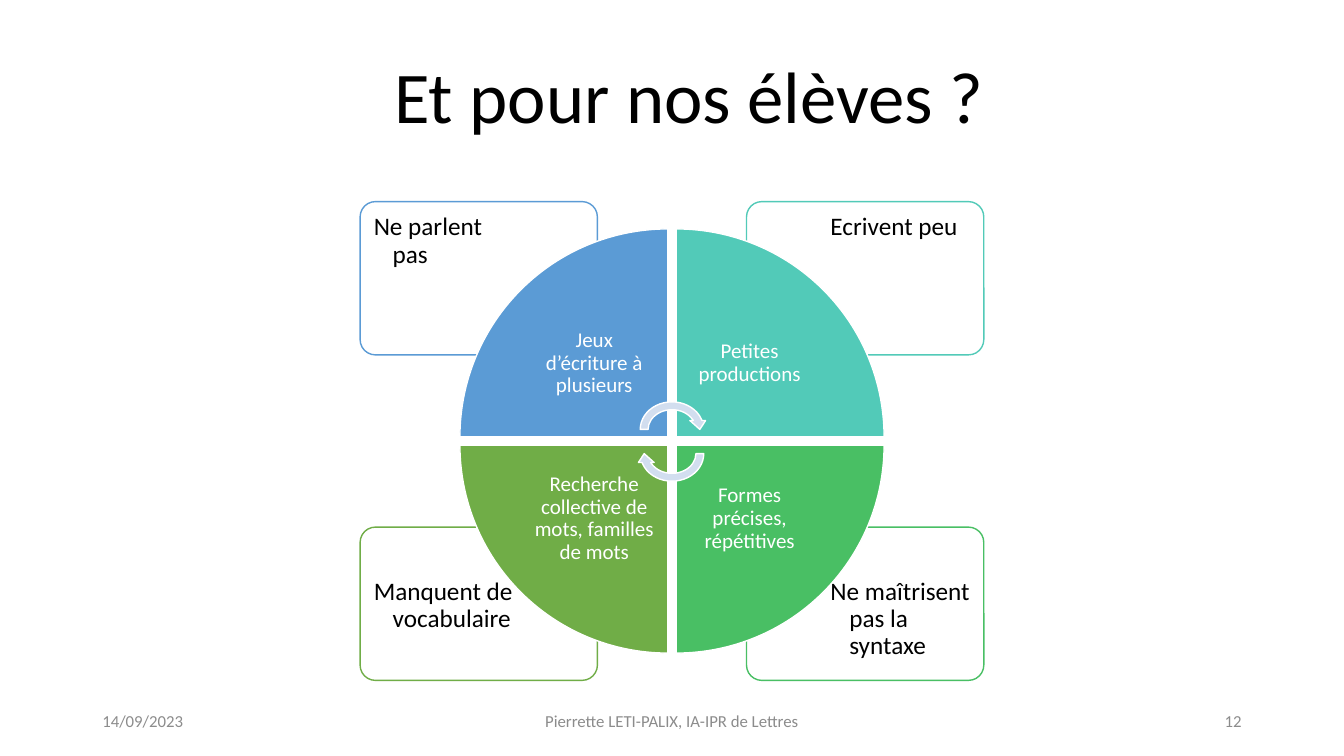
"""Builds the slide on pupils' difficulties and the matching activities."""
from pptx import Presentation
from pptx.dml.color import RGBColor
from pptx.enum.shapes import MSO_SHAPE as SHAPE
from pptx.enum.text import MSO_ANCHOR as ANCHOR, PP_ALIGN as ALIGN
from pptx.util import Emu, Pt

PX = 9525
FONT = "Calibri"
COLORS = {
    "blue": "5B9BD5", "teal": "52CAB8", "olive": "70AD47", "green": "49BF64",
    "pale": "D2DEEF", "white": "FFFFFF", "black": "000000", "grey": "8C8C8C",
}
CARD_W, CARD_H = 226, 146
NOTE_W, NOTE_H = 156, 104
WEDGE, LABEL = 198, 140
HANG = 18
QUADRANTS = [
    (0, 0, 0, "blue", "Ne parlent pas", "Jeux d’écriture à plusieurs"),
    (1, 0, 90, "teal", "Ecrivent peu", "Petites productions"),
    (1, 1, 180, "green", "Ne maîtrisent pas la syntaxe", "Formes précises, répétitives"),
    (0, 1, 270, "olive", "Manquent de vocabulaire",
     "Recherche collective de mots, familles de mots"),
]
FOOTERS = [
    (88, 288, ALIGN.LEFT, "14/09/2023"),
    (424, 432, ALIGN.CENTER, "Pierrette LETI-PALIX, IA-IPR de Lettres"),
    (904, 288, ALIGN.RIGHT, "12"),
]


def px(*values):
    """Turn pixel lengths into EMU."""
    return [Emu(v * PX) for v in values]


def rgb(name):
    """Return the named colour."""
    return RGBColor.from_string(COLORS[name])


def add_shape(s, kind, box, fill, line, rotation=0):
    """Add a filled and outlined preset shape."""
    sp = s.shapes.add_shape(kind, *px(*box))
    sp.shadow.inherit = False
    sp.fill.solid()
    sp.fill.fore_color.rgb = rgb(fill)
    sp.line.color.rgb = rgb(line)
    sp.line.width = Pt(1)
    sp.rotation = rotation
    return sp


def add_text(s, box, text, size, color, align=ALIGN.LEFT, anchor=ANCHOR.MIDDLE,
             inset=None, spacing=0.9):
    """Add a wrapped one-paragraph text box and return its paragraph."""
    tf = s.shapes.add_textbox(*px(*box)).text_frame
    tf.word_wrap = True
    tf.vertical_anchor = anchor
    if inset is not None:
        tf.margin_left, tf.margin_top, tf.margin_right, tf.margin_bottom = px(*[inset] * 4)
    p = tf.paragraphs[0]
    p.text = text
    p.alignment = align
    p.line_spacing = spacing
    p.font.name = FONT
    p.font.size = Pt(size)
    p.font.color.rgb = rgb(color)
    return p


def add_card(s, col, row, color, text):
    """Add an outlined corner card with its hanging-indent note."""
    box = (343 + 368 * col, 192 + 310 * row, CARD_W, CARD_H)
    sp = add_shape(s, SHAPE.ROUNDED_RECTANGLE, box, "white", color)
    sp.adjustments[0] = 0.1
    note = (347 + 435 * col, 195 + 347 * row, NOTE_W, NOTE_H)
    p = add_text(s, note, text, 18, "black", anchor=ANCHOR.TOP, inset=9)
    pPr = p._p.get_or_add_pPr()
    pPr.set("marL", str(HANG * PX))
    pPr.set("indent", str(-HANG * PX))


def add_wedge(s, col, row, rotation, color, text):
    """Add a quarter of the disc with its label next to the centre."""
    left, top = 438 + 206 * col, 218 + 206 * row
    add_shape(s, SHAPE.PIE_WEDGE, (left, top, WEDGE, WEDGE), color, "white", rotation)
    shift = WEDGE - LABEL
    label = (left + shift * (1 - col), top + shift * (1 - row), LABEL, LABEL)
    add_text(s, label, text, 15, "white", ALIGN.CENTER, inset=12)


def main():
    """Build and save the slide."""
    prs = Presentation()
    prs.slide_width, prs.slide_height = px(1280, 720)
    s = prs.slides.add_slide(prs.slide_layouts[6])
    add_text(s, (104, 36, 1104, 119), "Et pour nos élèves ?", 52, "black", ALIGN.CENTER)
    for col, row, _, color, note, _ in reversed(QUADRANTS):
        add_card(s, col, row, color, note)
    for col, row, rotation, color, _, label in QUADRANTS:
        add_wedge(s, col, row, rotation, color, label)
    for top, rotation in ((379, 0), (402, 180)):
        add_shape(s, SHAPE.CIRCULAR_ARROW, (606, top, 68, 60), "pale", "white", rotation)
    for left, width, align, text in FOOTERS:
        add_text(s, (left, 667, width, 38), text, 12, "grey", align, spacing=1.0)
    prs.save("out.pptx")


if __name__ == "__main__":
    main()
